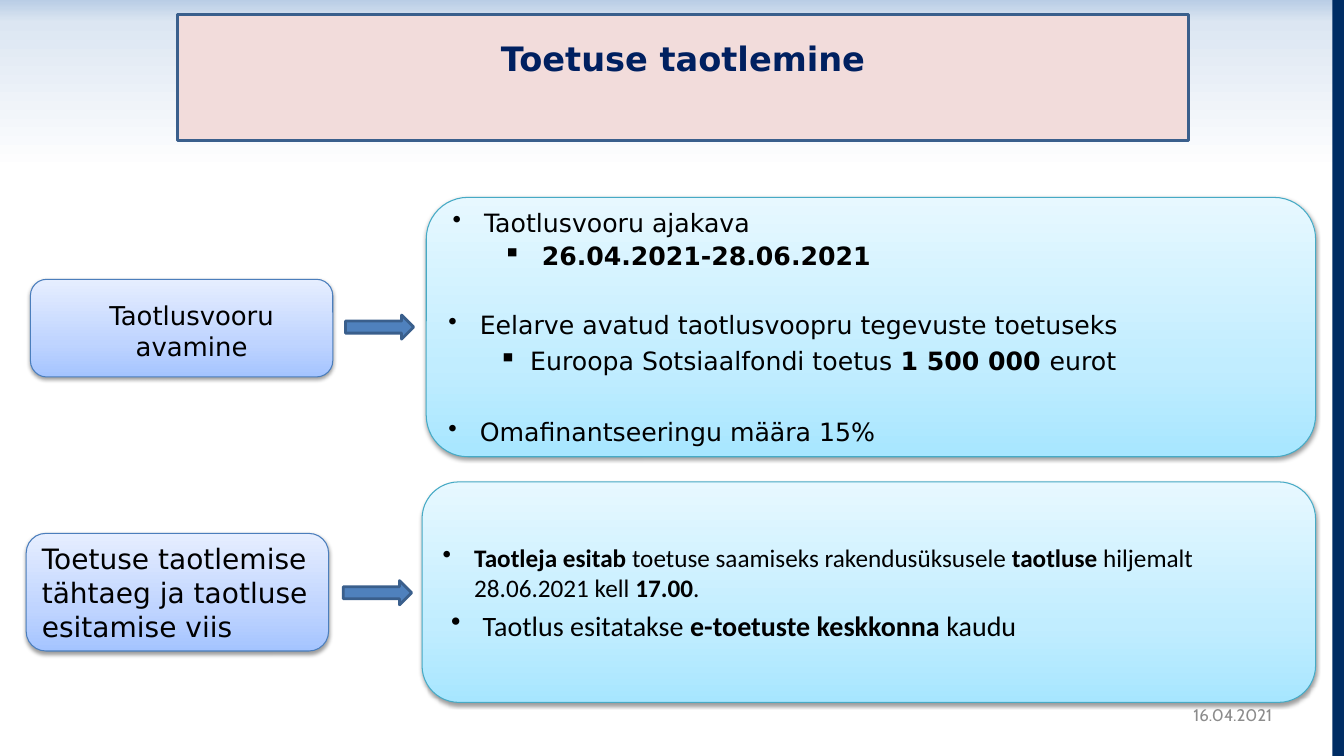
from copy import deepcopy
from pptx import Presentation
from pptx.dml.color import RGBColor as RGB
from pptx.enum.shapes import MSO_SHAPE as SHAPE
from pptx.enum.text import MSO_ANCHOR as ANCHOR, PP_ALIGN as ALIGN
from pptx.oxml import parse_xml
from pptx.oxml.ns import nsdecls, qn
from pptx.util import Emu, Pt

PX = 9525
BLACK = RGB(0, 0, 0)
NAVY = RGB(0x00, 0x20, 0x60)
EDGE = RGB(0x00, 0x2D, 0x64)
GREY = RGB(0x8C, 0x8C, 0x8C)
ROSE = RGB(0xF2, 0xDC, 0xDB)
STEEL = RGB(0x3A, 0x5F, 0x8C)
BLUE = RGB(0x4F, 0x81, 0xBD)
TRIM = RGB(0x4B, 0x7E, 0xBC)
TEAL = RGB(0x46, 0xAA, 0xC5)
SKY = [(0, RGB(0xB9, 0xCD, 0xE5)), (0.13, RGB(0xDC, 0xE6, 0xF2)),
       (1, RGB(0xFF, 0xFF, 0xFF))]
LILAC = [(0, RGB(0xA4, 0xC4, 0xFF)), (0.35, RGB(0xBF, 0xD4, 0xFF)),
         (1, RGB(0xE6, 0xEE, 0xFF))]
AQUA = [(0, RGB(0xA7, 0xE6, 0xFF)), (0.35, RGB(0xC1, 0xED, 0xFF)),
        (1, RGB(0xE7, 0xF8, 0xFF))]
SANS = "DejaVu Sans"


def px(n):
    return Emu(n * PX)


def blend(shape, stops, angle):
    fill = shape.fill
    fill.gradient()
    fill.gradient_angle = angle
    first = shape._element.spPr.find(".//" + qn("a:gs"))
    first.addnext(deepcopy(first))
    for stop, (place, color) in zip(fill.gradient_stops, stops):
        stop.position = place
        stop.color.rgb = color


def add_box(slide, kind, box, fill, line=None, width=0, angle=90):
    shape = slide.shapes.add_shape(kind, *map(px, box))
    shape.shadow.inherit = False
    if isinstance(fill, list):
        blend(shape, fill, angle)
    else:
        shape.fill.solid()
        shape.fill.fore_color.rgb = fill
    if line is None:
        shape.line.fill.background()
    else:
        shape.line.color.rgb = line
        shape.line.width = Pt(width)
    return shape


def add_card(slide, box, fill, line):
    card = add_box(slide, SHAPE.ROUNDED_RECTANGLE, box, fill, line, 0.75)
    card._element.spPr.find(qn("a:effectLst")).append(parse_xml(
        f'<a:outerShdw {nsdecls("a")} blurRad="39370" dist="20320" '
        'dir="5400000" rotWithShape="0"><a:srgbClr val="000000">'
        '<a:alpha val="38000"/></a:srgbClr></a:outerShdw>'))
    return card


def set_frame(shape, pads=None):
    frame = shape.text_frame
    frame.word_wrap = True
    frame.vertical_anchor = ANCHOR.MIDDLE
    if pads:
        (frame.margin_left, frame.margin_top,
         frame.margin_right, frame.margin_bottom) = map(px, pads)
    return frame


def add_run(para, text, size, font=SANS, color=BLACK, bold=False):
    run = para.add_run()
    run.text = text
    run.font.size = Pt(size)
    run.font.name = font
    run.font.color.rgb = color
    run.font.bold = bold


def add_label(shape, text, size, align, pads=None, **style):
    para = set_frame(shape, pads).paragraphs[0]
    para.alignment = align
    add_run(para, text, size, **style)


def add_list(shape, items, font):
    frame = set_frame(shape)
    for i, (mark, left, hang, gap, size, runs) in enumerate(items):
        para = frame.add_paragraph() if i else frame.paragraphs[0]
        para.alignment = ALIGN.LEFT
        para.level = 1 if mark == "▪" else 0
        props = para._p.get_or_add_pPr()
        props.set("marL", str(px(left)))
        props.set("indent", str(-px(hang)))
        props.append(parse_xml(f'<a:buChar {nsdecls("a")} char="{mark}"/>'))
        if gap:
            para.space_before = Pt(gap)
        for text, bold in runs:
            add_run(para, text, size, font, bold=bold)


def add_arrow(slide, left, top):
    add_box(slide, SHAPE.RIGHT_ARROW, (left, top, 65, 23), BLUE, STEEL, 2)


def main():
    deck = Presentation()
    deck.slide_width, deck.slide_height = px(1280), px(720)
    slide = deck.slides.add_slide(deck.slide_layouts[6])

    add_box(slide, SHAPE.RECTANGLE, (0, 0, 1280, 163), SKY, angle=270)
    add_box(slide, SHAPE.RECTANGLE, (1269, 0, 11, 720), EDGE)
    date = slide.shapes.add_textbox(*map(px, (1084, 662, 137, 38)))
    add_label(date, "16.04.2021", 12, ALIGN.RIGHT, font="Cabin", color=GREY)

    title = add_box(slide, SHAPE.RECTANGLE, (169, 14, 963, 120),
                    ROSE, STEEL, 2)
    add_label(title, "Toetuse taotlemine", 24, ALIGN.CENTER,
              (0, 0, 0, 37), color=NAVY, bold=True)

    call = add_card(slide, (29, 266, 288, 93), LILAC, TRIM)
    add_label(call, "Taotlusvooru avamine", 18.5, ALIGN.CENTER, (19, 5, 0, 0))
    term = add_card(slide, (25, 508, 288, 112), LILAC, TRIM)
    add_label(term, "Toetuse taotlemise tähtaeg ja taotluse esitamise viis",
              20, ALIGN.LEFT)

    plan = add_card(slide, (406, 188, 847, 247), AQUA, TEAL)
    plan.adjustments[0] = 0.16
    add_list(plan, [
        ("•", 34, 30, 0, 18, [("Taotlusvooru ajakava", False)]),
        ("▪", 89, 37, 2, 18, [("26.04.2021-28.06.2021", True)]),
        ("•", 30, 30, 27.5, 18,
         [("Eelarve avatud taotlusvoopru tegevuste toetuseks", False)]),
        ("▪", 78, 30, 4.5, 18,
         [("Euroopa Sotsiaalfondi toetus ", False), ("1 500 000 ", True),
          ("eurot", False)]),
        ("•", 30, 30, 29, 18, [("Omafinantseeringu määra 15%", False)]),
    ], SANS)

    steps = add_card(slide, (402, 459, 851, 210), AQUA, TEAL)
    add_list(steps, [
        ("•", 30, 30, 0, 18,
         [("Taotleja esitab ", True),
          ("toetuse saamiseks rakendusüksusele ", False),
          ("taotluse", True), (" hiljemalt 28.06.2021 kell ", False),
          ("17.00", True), (".", False)]),
        ("•", 38, 30, 4, 20,
         [("Taotlus esitatakse ", False), ("e-toetuste keskkonna ", True),
          ("kaudu", False)]),
    ], "Calibri")

    add_arrow(slide, 329, 300)
    add_arrow(slide, 327, 553)
    deck.save("out.pptx")


if __name__ == "__main__":
    main()
